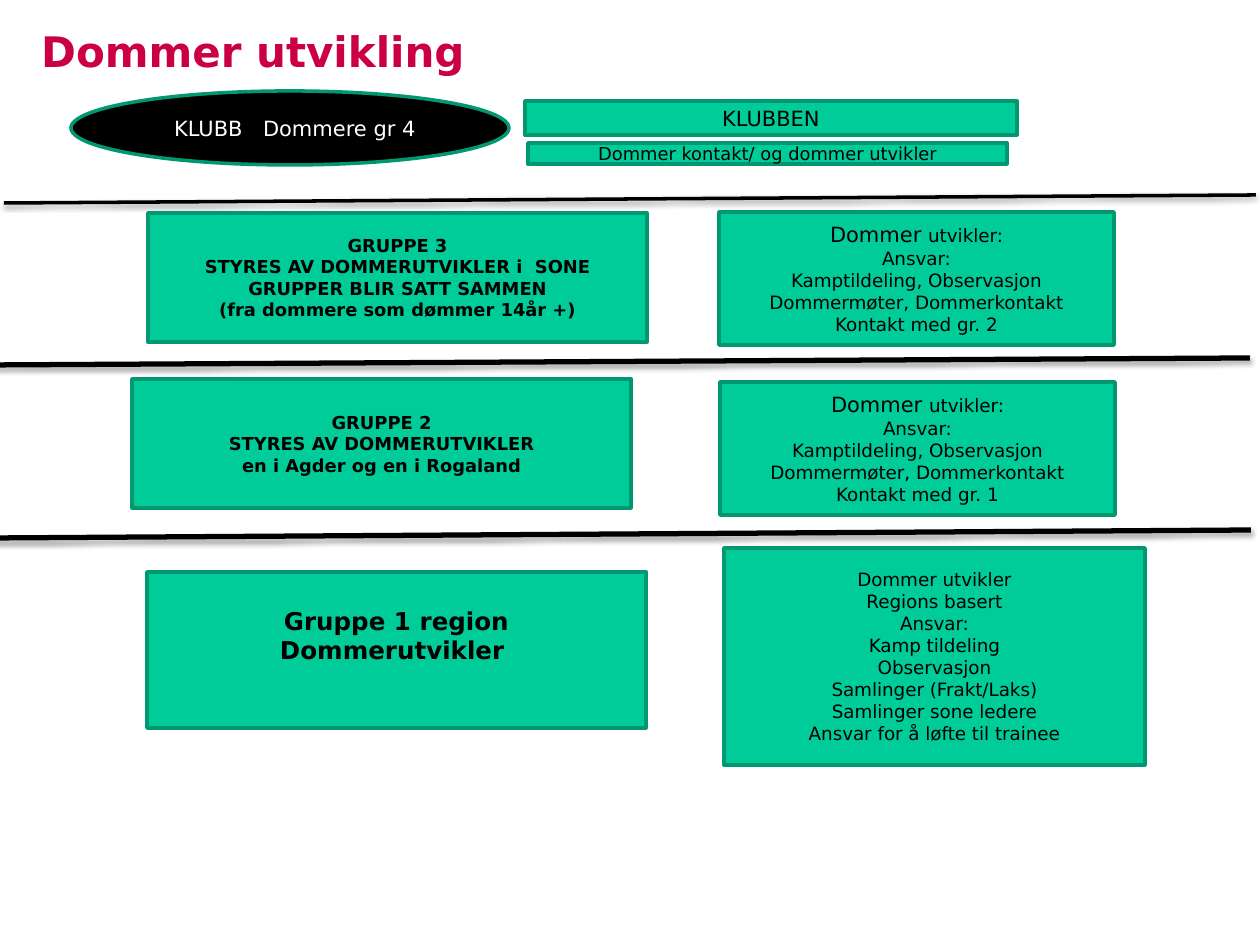
"""Build a slide on how referees are developed, group by group."""
from dataclasses import dataclass

import lxml.etree
import pptx
import pptx.dml.color
import pptx.enum.shapes
import pptx.enum.text
import pptx.oxml.ns
import pptx.util

SCALE = 914400 / 126
FONT = "DejaVu Sans"
HUES = {"green": "00CC99", "edge": "009771", "black": "000000",
        "white": "FFFFFF", "red": "CB0044"}
SHAPE = pptx.enum.shapes.MSO_SHAPE
ALIGN = pptx.enum.text.PP_ALIGN
MIDDLE = pptx.enum.text.MSO_ANCHOR.MIDDLE
TOP = pptx.enum.text.MSO_ANCHOR.TOP


@dataclass(frozen=True)
class Card:
    box: tuple[int, int, int, int]
    lines: tuple[str, ...]
    size: float = 10.5
    bold: bool = False
    lead: str = ""
    pads: tuple[int, int, int, int] = (12, 0, 12, 0)
    form: int = SHAPE.RECTANGLE
    fill: str = "green"
    ink: str = "black"
    align: int = ALIGN.CENTER
    tab: int = 0


@dataclass(frozen=True)
class Rule:
    start: tuple[int, int]
    end: tuple[int, int]
    width: int = 3
    drop: float = 1.8
    alpha: int = 35


def px(count: int) -> int:
    return round(count * SCALE)


def hue(name: str) -> pptx.dml.color.RGBColor:
    return pptx.dml.color.RGBColor.from_string(HUES[name])


def node(parent, tag: str, **attrs):
    items = {key: str(value) for key, value in attrs.items()}
    return lxml.etree.SubElement(parent, pptx.oxml.ns.qn(tag), items)


def write(frame, lines: tuple[str, ...], *, size: float, bold: bool = False,
          ink: str = "black", align: int = ALIGN.CENTER, lead: str = "",
          pads: tuple[int, int, int, int] = (12, 6, 12, 6),
          anchor: int = MIDDLE, tab: int = 0) -> None:
    frame.word_wrap = True
    frame.vertical_anchor = anchor
    (frame.margin_left, frame.margin_top,
     frame.margin_right, frame.margin_bottom) = map(px, pads)
    for index, line in enumerate(lines):
        para = frame.paragraphs[0] if index == 0 else frame.add_paragraph()
        para.alignment = align
        if tab:
            stops = node(para._p.get_or_add_pPr(), "a:tabLst")
            node(stops, "a:tab", pos=px(tab), algn="l")
        parts = [(line, size)]
        if lead and index == 0:
            parts.insert(0, (lead, 12))
        for text, points in parts:
            run = para.add_run()
            run.text = text
            run.font.name = FONT
            run.font.size = pptx.util.Pt(points)
            run.font.bold = bold
            run.font.color.rgb = hue(ink)


def draw_card(slide, card: Card) -> None:
    shape = slide.shapes.add_shape(card.form, *map(px, card.box))
    shape.shadow.inherit = False
    shape.fill.solid()
    shape.fill.fore_color.rgb = hue(card.fill)
    shape.line.color.rgb = hue("edge")
    shape.line.width = pptx.util.Pt(2)
    write(shape.text_frame, card.lines, size=card.size, bold=card.bold,
          ink=card.ink, align=card.align, lead=card.lead, pads=card.pads,
          tab=card.tab)


def draw_rule(slide, rule: Rule) -> None:
    line = slide.shapes.add_connector(
        pptx.enum.shapes.MSO_CONNECTOR.STRAIGHT,
        *map(px, rule.start + rule.end))
    line.line.color.rgb = hue("black")
    line.line.width = pptx.util.Pt(rule.width)
    effect = node(line._element.spPr, "a:effectLst")
    shade = node(effect, "a:outerShdw", blurRad=pptx.util.Pt(3.1),
                 dist=pptx.util.Pt(rule.drop), dir=90 * 60000,
                 rotWithShape=0)
    tint = node(shade, "a:srgbClr", val=HUES["black"])
    node(tint, "a:alpha", val=rule.alpha * 1000)


def duty(left: int, top: int, group: int) -> Card:
    return Card((left, top, 395, 133),
                ("utvikler:", "Ansvar:", "Kamptildeling, Observasjon",
                 "Dommermøter, Dommerkontakt", f"Kontakt med gr. {group}"),
                lead="Dommer ")


CARDS = (
    Card((528, 143, 479, 21), ("Dommer kontakt/ og dommer utvikler",), 10.2),
    Card((525, 101, 492, 34), ("KLUBBEN",), 12),
    Card((71, 91, 438, 74), ("KLUBB\tDommere gr 4",), 12, form=SHAPE.OVAL,
         fill="black", ink="white", align=ALIGN.LEFT, pads=(39, 0, 12, 0),
         tab=89),
    Card((148, 213, 499, 129),
         ("GRUPPE 3", "STYRES AV DOMMERUTVIKLER i  SONE",
          "GRUPPER BLIR SATT SAMMEN", "(fra dommere som dømmer 14år +)"),
         10.2, True),
    duty(719, 212, 2),
    Card((132, 379, 499, 129),
         ("GRUPPE 2", "STYRES AV DOMMERUTVIKLER",
          "en i Agder og en i Rogaland"), 10.2, True),
    duty(720, 382, 1),
    Card((147, 572, 499, 156), ("Gruppe 1 region", "Dommerutvikler "),
         14, True, pads=(12, 0, 12, 30)),
    Card((724, 548, 421, 217),
         ("Dommer utvikler", "Regions basert", "Ansvar:", "Kamp tildeling",
          "Observasjon", "Samlinger (Frakt/Laks)", "Samlinger sone ledere",
          "Ansvar for å løfte til trainee")),
)
RULES = (
    Rule((4, 203), (1256, 195), 2, 1.6, 38),
    Rule((-9, 365), (1250, 358)),
    Rule((-8, 538), (1251, 530)),
)


def main() -> None:
    deck = pptx.Presentation()
    deck.slide_width, deck.slide_height = px(1260), px(945)
    slide = deck.slides.add_slide(deck.slide_layouts[6])
    title = slide.shapes.add_textbox(*map(px, (25, 20, 456, 63)))
    write(title.text_frame, ("Dommer utvikling",), size=24, bold=True,
          ink="red", anchor=TOP)
    for rule in RULES:
        draw_rule(slide, rule)
    for card in CARDS:
        draw_card(slide, card)
    deck.save("out.pptx")


if __name__ == "__main__":
    main()
